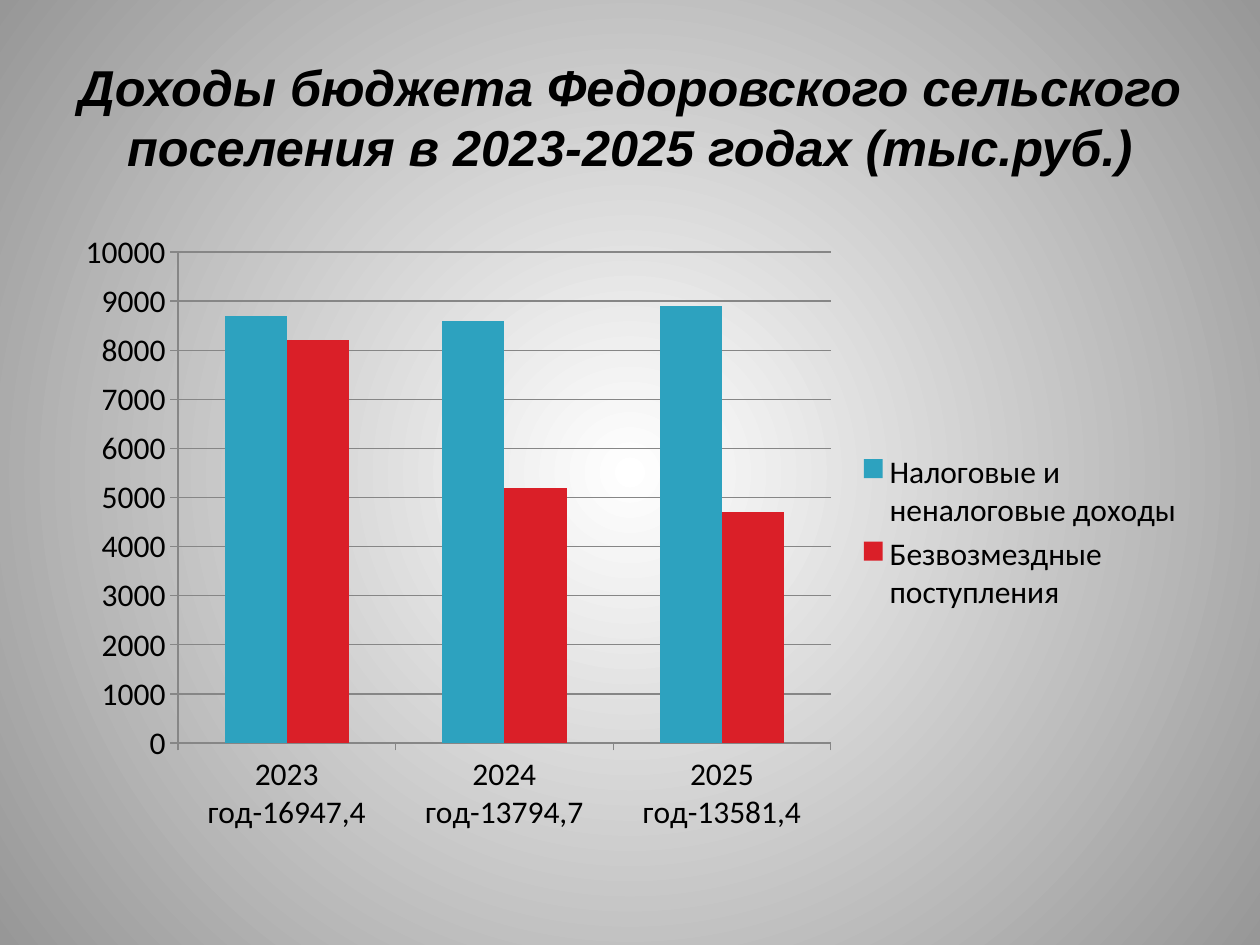
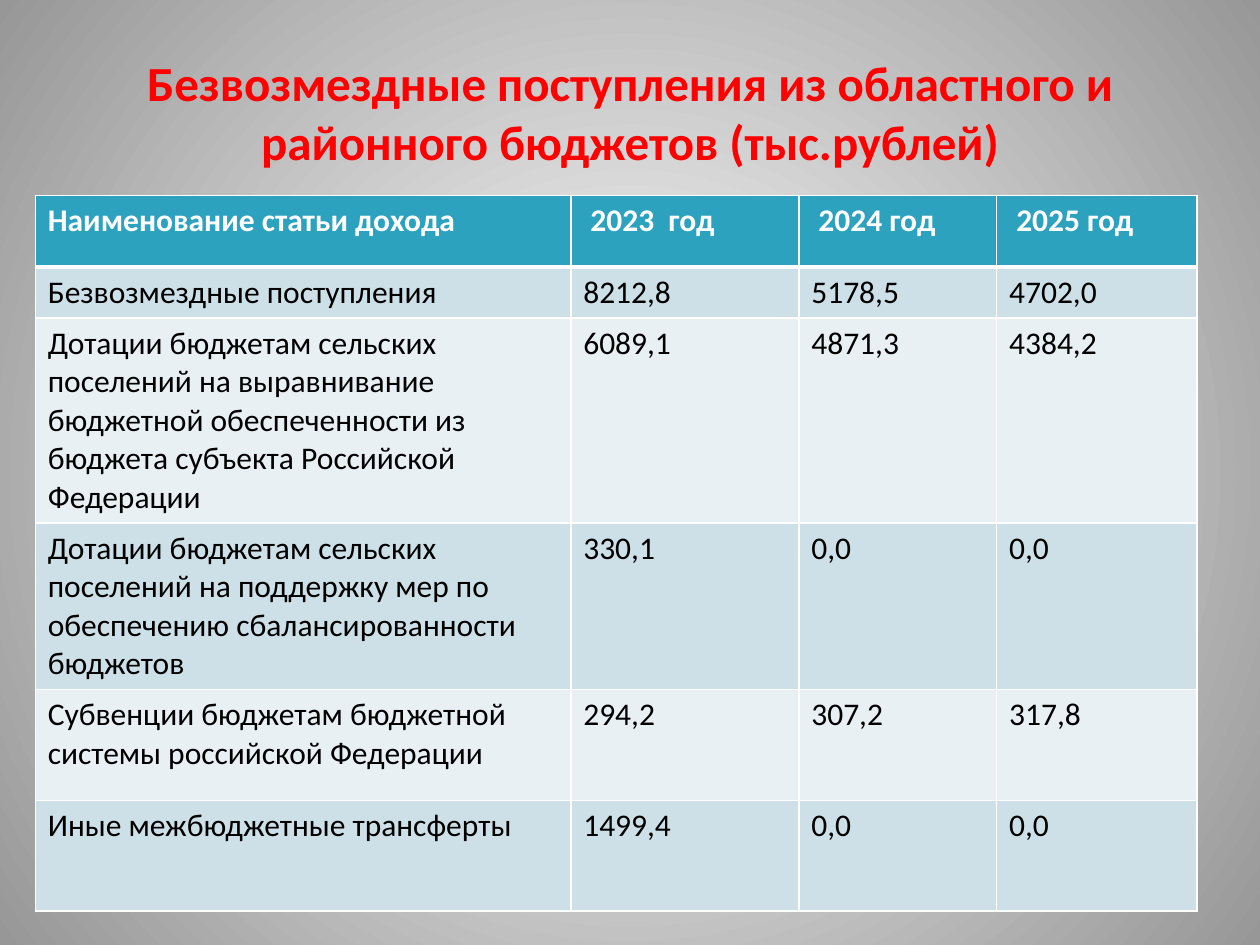
"""Build two slides on the revenues of a rural settlement budget."""
from dataclasses import dataclass

from lxml.etree import SubElement
from pptx import Presentation
from pptx.chart.data import CategoryChartData
from pptx.dml.color import RGBColor
from pptx.enum.chart import XL_CHART_TYPE, XL_LEGEND_POSITION, XL_TICK_MARK
from pptx.enum.text import MSO_ANCHOR, MSO_AUTO_SIZE, PP_ALIGN
from pptx.oxml import parse_xml
from pptx.oxml.ns import nsdecls, qn
from pptx.presentation import Presentation as Deck
from pptx.slide import Slide
from pptx.table import _Cell as Cell
from pptx.util import Inches, Pt


@dataclass(frozen=True)
class Theme:
    """Colours, fonts and type sizes of the slides."""
    black: str = "000000"
    white: str = "FFFFFF"
    edge_grey: str = "979797"
    line_grey: str = "868686"
    teal: str = "2DA2BF"
    crimson: str = "DA1F28"
    title_red: str = "FF0000"
    band_dark: str = "CDE0E8"
    band_light: str = "E8F0F4"
    body_font: str = "Calibri"
    chart_title_font: str = "Arial"
    chart_title_size: float = 28.8
    table_title_size: float = 28
    body_size: float = 18
    cell_line: float = 1
    header_line: float = 3


@dataclass(frozen=True)
class TextStyle:
    """Look of one run."""
    size: float
    color: str
    font: str = "Calibri"
    bold: bool = False
    italic: bool = False
    shadow: bool = False


@dataclass(frozen=True)
class Series:
    """One group of chart columns."""
    name: str
    values: tuple[float, ...]
    color: str


@dataclass(frozen=True)
class TableRow:
    """Height and texts of one table row."""
    height: float
    texts: tuple[str, ...]


THEME = Theme()
CHART_TITLE = TextStyle(THEME.chart_title_size, THEME.black, THEME.chart_title_font, bold=True, italic=True)
TABLE_TITLE = TextStyle(THEME.table_title_size, THEME.title_red, THEME.body_font, bold=True, shadow=True)
HEADER_TEXT = TextStyle(THEME.body_size, THEME.white, THEME.body_font, bold=True)
BODY_TEXT = TextStyle(THEME.body_size, THEME.black, THEME.body_font)

CATEGORIES = ("2023 год-16947,4", "2024 год-13794,7", "2025 год-13581,4")
REVENUES = (
    Series("Налоговые и неналоговые доходы", (8700, 8600, 8900), THEME.teal),
    Series("Безвозмездные поступления", (8200, 5200, 4700), THEME.crimson),
)
COLUMN_WIDTHS = (4.25, 1.81, 1.57, 1.59)
TRANSFERS = (
    TableRow(0.57, ("Наименование статьи дохода", " 2023  год", " 2024 год", " 2025 год")),
    TableRow(0.39, ("Безвозмездные поступления", "8212,8", "5178,5", "4702,0")),
    TableRow(1.46, ("Дотации бюджетам сельских поселений на выравнивание бюджетной обеспеченности "
                    "из бюджета субъекта Российской Федерации", "6089,1", "4871,3", "4384,2")),
    TableRow(0.88, ("Дотации бюджетам сельских поселений на поддержку мер по обеспечению "
                    "сбалансированности бюджетов", "330,1", "0,0", "0,0")),
    TableRow(0.88, ("Субвенции бюджетам бюджетной системы российской Федерации",
                    "294,2", "307,2", "317,8")),
    TableRow(0.88, ("Иные межбюджетные трансферты", "1499,4", "0,0", "0,0")),
)


def set_background(presentation: Deck) -> None:
    """Give the slide master a radial gradient."""
    common = presentation.slide_master.element.find(qn("p:cSld"))
    for background in common.findall(qn("p:bg")):
        common.remove(background)
    common.insert(0, parse_xml(
        f'<p:bg {nsdecls("p", "a")}><p:bgPr><a:gradFill rotWithShape="1"><a:gsLst>'
        f'<a:gs pos="0"><a:srgbClr val="{THEME.white}"/></a:gs>'
        f'<a:gs pos="100000"><a:srgbClr val="{THEME.edge_grey}"/></a:gs></a:gsLst>'
        '<a:path path="circle"><a:fillToRect l="50000" t="50000" r="50000" b="50000"/></a:path>'
        '</a:gradFill><a:effectLst/></p:bgPr></p:bg>'))


def write_run(paragraph, text: str, style: TextStyle) -> None:
    """Add one styled run to a paragraph."""
    run = paragraph.add_run()
    run.text = text
    font = run.font
    font.size = Pt(style.size)
    font.name = style.font
    font.bold = style.bold
    font.italic = style.italic
    font.color.rgb = RGBColor.from_string(style.color)
    if style.shadow:
        properties = run._r.get_or_add_rPr()
        properties.find(qn("a:solidFill")).addnext(parse_xml(
            f'<a:effectLst {nsdecls("a")}><a:outerShdw blurRad="50800" dist="50800" dir="5400000">'
            f'<a:srgbClr val="{THEME.black}"><a:alpha val="65000"/></a:srgbClr>'
            '</a:outerShdw></a:effectLst>'))


def add_titled_slide(presentation: Deck, title: str, style: TextStyle, height: float) -> Slide:
    """Add a slide with a centred title."""
    slide = presentation.slides.add_slide(presentation.slide_layouts[5])
    shape = slide.shapes.title
    shape.left, shape.top = Inches(0.5), Inches(0.3)
    shape.width, shape.height = Inches(9), Inches(height)
    frame = shape.text_frame
    frame.word_wrap = True
    frame.auto_size = MSO_AUTO_SIZE.NONE
    frame.vertical_anchor = MSO_ANCHOR.MIDDLE
    paragraph = frame.paragraphs[0]
    paragraph.alignment = PP_ALIGN.CENTER
    write_run(paragraph, title, style)
    return slide


def add_revenue_chart(slide: Slide) -> None:
    """Draw the clustered columns of revenues by year."""
    data = CategoryChartData(number_format="General")
    data.categories = CATEGORIES
    for series in REVENUES:
        data.add_series(series.name, series.values)
    chart = slide.shapes.add_chart(XL_CHART_TYPE.COLUMN_CLUSTERED, Inches(0.5), Inches(1.75),
                                   Inches(9), Inches(4.95), data).chart
    chart.has_title = False
    chart.font.size = Pt(THEME.body_size)
    chart.font.name = THEME.body_font
    chart.font.color.rgb = RGBColor.from_string(THEME.black)
    chart.has_legend = True
    chart.legend.position = XL_LEGEND_POSITION.RIGHT
    chart.legend.include_in_layout = False
    plot = chart.plots[0]
    plot.gap_width = 150
    plot.overlap = 0
    plot.vary_by_categories = False
    for column, series in zip(plot.series, REVENUES):
        column.format.fill.solid()
        column.format.fill.fore_color.rgb = RGBColor.from_string(series.color)
    value_axis = chart.value_axis
    value_axis.minimum_scale, value_axis.maximum_scale, value_axis.major_unit = 0, 10000, 1000
    value_axis.has_major_gridlines = True
    for axis in (chart.category_axis, value_axis):
        axis.major_tick_mark = XL_TICK_MARK.OUTSIDE
        axis.minor_tick_mark = XL_TICK_MARK.NONE
    for line in (chart.category_axis.format.line, value_axis.format.line,
                 value_axis.major_gridlines.format.line):
        line.width = Pt(0.75)
        line.color.rgb = RGBColor.from_string(THEME.line_grey)


def set_borders(cell: Cell, top: float, bottom: float) -> None:
    """Draw white lines on the four sides of a cell."""
    properties = cell._tc.get_or_add_tcPr()
    sides = {"L": THEME.cell_line, "R": THEME.cell_line, "T": top, "B": bottom}
    for side, width in sides.items():
        line = SubElement(properties, qn(f"a:ln{side}"), w=str(Pt(width)))
        fill = SubElement(line, qn("a:solidFill"))
        SubElement(fill, qn("a:srgbClr"), val=THEME.white)


def add_transfer_table(slide: Slide) -> None:
    """Draw the banded table of transfers."""
    table = slide.shapes.add_table(
        len(TRANSFERS), len(COLUMN_WIDTHS), Inches(0.28), Inches(1.55),
        Inches(sum(COLUMN_WIDTHS)), Inches(sum(row.height for row in TRANSFERS))).table
    for column, width in zip(table.columns, COLUMN_WIDTHS):
        column.width = Inches(width)
    for index, row in enumerate(TRANSFERS):
        table.rows[index].height = Inches(row.height)
        is_header = index == 0
        band = THEME.band_dark if index % 2 else THEME.band_light
        for cell, text in zip(table.rows[index].cells, row.texts):
            set_borders(cell,
                        top=THEME.header_line if index == 1 else THEME.cell_line,
                        bottom=THEME.header_line if is_header else THEME.cell_line)
            cell.fill.solid()
            cell.fill.fore_color.rgb = RGBColor.from_string(THEME.teal if is_header else band)
            write_run(cell.text_frame.paragraphs[0], text, HEADER_TEXT if is_header else BODY_TEXT)


def main() -> None:
    """Build and save the presentation."""
    presentation = Presentation()
    presentation.slide_width, presentation.slide_height = Inches(10), Inches(7.5)
    set_background(presentation)
    add_revenue_chart(add_titled_slide(
        presentation, "Доходы бюджета Федоровского сельского поселения в 2023-2025 годах (тыс.руб.)",
        CHART_TITLE, 1.25))
    add_transfer_table(add_titled_slide(
        presentation, "Безвозмездные поступления из областного и районного бюджетов (тыс.рублей)",
        TABLE_TITLE, 1.17))
    presentation.save("out.pptx")


if __name__ == "__main__":
    main()
